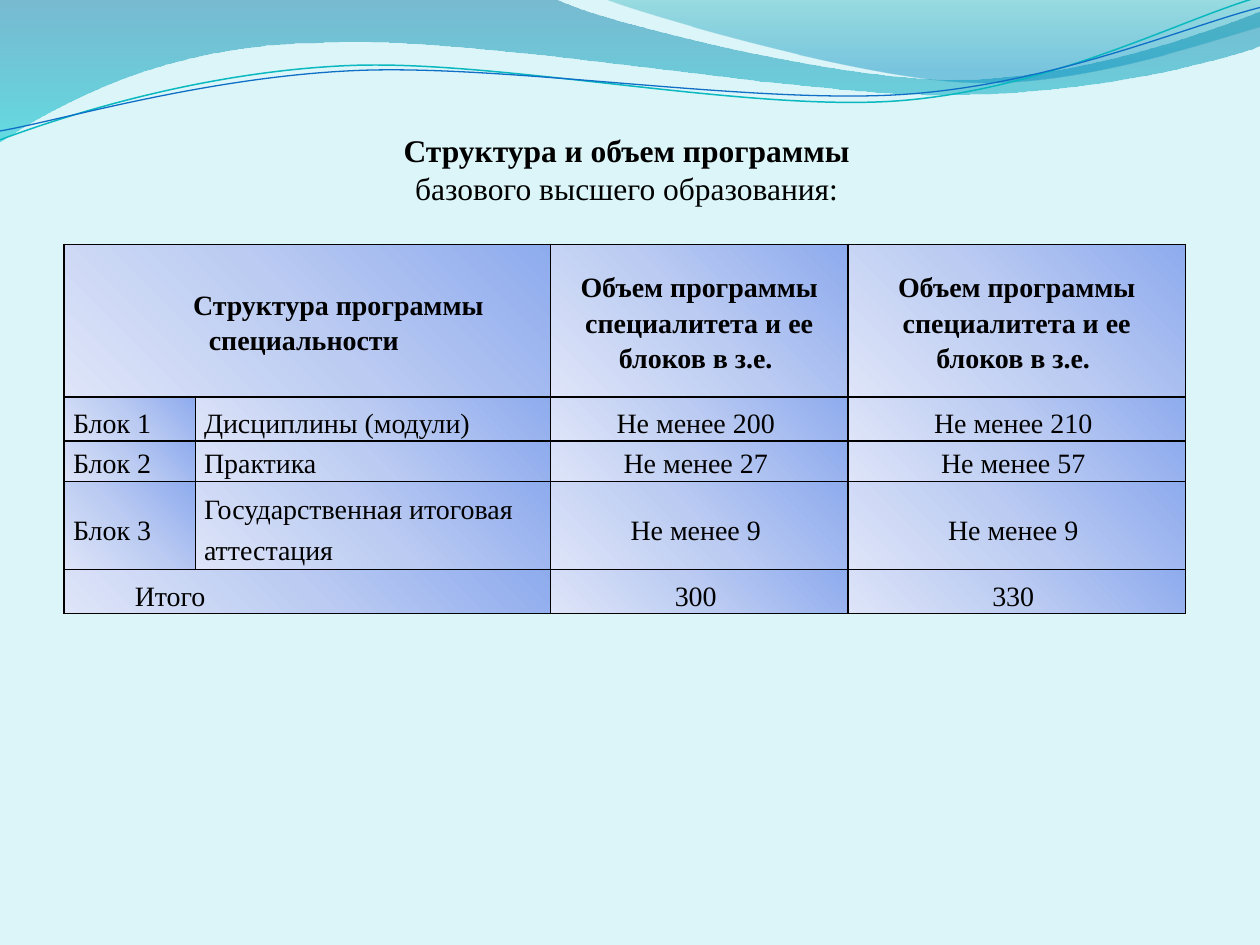
import math
from dataclasses import dataclass

from lxml import etree
from pptx import Presentation
from pptx import util as u
from pptx.dml.color import RGBColor
from pptx.enum import text
from pptx.oxml import ns


@dataclass(frozen=True)
class Theme:
    font: str = "Times New Roman"
    ink: str = "000000"
    back: str = "DBF5F9"
    teal: str = "0AB8BF"
    blue: str = "0F6FC6"
    head: int = 18
    cell: int = 16
    edge: float = 1
    wave: tuple = ((0, "0074A1", 45), (100, "00C6CF", 55))
    crest: tuple = ((0, "00A1A9", 30), (80, "008BBF", 45))
    tint: tuple = ((0, "8EABEE", 100), (50, "BBCBF2", 100), (100, "DEE5F8", 100))


def turn(point, pivot, angle):
    cos, sin = math.cos(math.radians(angle)), math.sin(math.radians(angle))
    x, y = point[0] - pivot[0], point[1] - pivot[1]
    return pivot[0] + x * cos - y * sin, pivot[1] + x * sin + y * cos


def bend(shape, steps):
    nodes = shape._element.findall(".//" + ns.qn("a:lnTo"))
    for step in steps:
        group, nodes = nodes[:len(step) // 2], nodes[len(step) // 2:]
        if len(group) == 1:
            continue
        arc = etree.Element(ns.qn("a:cubicBezTo"))
        group[0].addprevious(arc)
        for node in group:
            arc.append(node[0])
            node.getparent().remove(node)


def shade(node, stops, angle):
    grad = etree.SubElement(node, ns.qn("a:gradFill"), rotWithShape="1")
    steps = etree.SubElement(grad, ns.qn("a:gsLst"))
    for place, color, alpha in stops:
        stop = etree.SubElement(steps, ns.qn("a:gs"), pos=str(place * 1000))
        tone = etree.SubElement(stop, ns.qn("a:srgbClr"), val=color)
        if alpha < 100:
            etree.SubElement(tone, ns.qn("a:alpha"), val=str(alpha * 1000))
    etree.SubElement(grad, ns.qn("a:lin"), ang=str(angle * 60000), scaled="0")
    return grad


class Deck:
    COLS = 10

    def __init__(self, theme):
        self.theme = theme
        self.show = Presentation()
        self.show.slide_width = u.Inches(10)
        self.show.slide_height = u.Inches(7.5)
        self.unit = self.show.slide_width // self.COLS
        self.slide = self.show.slides.add_slide(self.show.slide_layouts[5])
        fill = self.slide.background.fill
        fill.solid()
        fill.fore_color.rgb = RGBColor.from_string(theme.back)

    def grid(self, *cells):
        return [round(cell * self.unit) for cell in cells]

    def run(self, para, words, size, bold=False):
        run = para.add_run()
        run.text = words
        run.font.name = self.theme.font
        run.font.color.rgb = RGBColor.from_string(self.theme.ink)
        run.font.size = u.Pt(size)
        run.font.bold = bold

    def outline(self, shapes, path, close, pivot=(0, 0), angle=0):
        points = [pair for step in path for pair in zip(step[::2], step[1::2])]
        spots = [tuple(self.grid(*turn(point, pivot, angle))) for point in points]
        pen = shapes.build_freeform(*spots[0], scale=1.0)
        pen.add_line_segments(spots[1:], close=close)
        shape = pen.convert_to_shape()
        bend(shape, path[1:])
        shape.rotation = -angle
        shape.shadow.inherit = False
        return shape

    def band(self, stops, *path):
        shape = self.outline(self.slide.shapes, path, True)
        shape.line.fill.background()
        props = shape.fill._xPr
        grad = shade(props, stops, 90)
        props.find(ns.qn("a:custGeom")).addnext(grad)

    def lines(self, angle, *items):
        shapes = self.slide.shapes.add_group_shape().shapes
        for color, width, pivot, path in items:
            shape = self.outline(shapes, path, False, pivot, angle)
            shape.fill.background()
            shape.line.color.rgb = RGBColor.from_string(color)
            shape.line.width = u.Pt(width)

    def title(self, place, lines):
        box = self.slide.shapes.title
        box.left, box.top, box.width, box.height = self.grid(*place)
        frame = box.text_frame
        frame.word_wrap = True
        frame.auto_size = text.MSO_AUTO_SIZE.NONE
        frame.vertical_anchor = text.MSO_ANCHOR.TOP
        para = frame.paragraphs[0]
        para.alignment = text.PP_ALIGN.CENTER
        para.line_spacing = 1.0
        for i, (words, bold) in enumerate(lines):
            if i:
                para.add_line_break()
            self.run(para, words, self.theme.head, bold)

    def table(self, place, cols, rows, data, gaps):
        size = (*place, sum(cols), sum(rows))
        table = self.slide.shapes.add_table(len(rows), len(cols), *self.grid(*size)).table
        table.first_row = table.horz_banding = False
        for col, width in zip(table.columns, self.grid(*cols)):
            col.width = width
        for row, height in zip(table.rows, self.grid(*rows)):
            row.height = height
        for r, line in enumerate(data):
            for c, words in enumerate(line):
                self.cell(table.cell(r, c), words, gaps[r], r == 0, r == 0 or c > 1)
            if line[1] is None:
                table.cell(r, 0).merge(table.cell(r, 1))
                para = table.cell(r, 0).text_frame.paragraphs[0]
                para._p.get_or_add_pPr().set("indent", str(self.grid(0.49)[0]))

    def cell(self, cell, words, gap, bold, center):
        cell.vertical_anchor = text.MSO_ANCHOR.MIDDLE
        cell.margin_left = cell.margin_right = u.Inches(0.07)
        cell.margin_top = u.Inches(0.01)
        cell.margin_bottom = 0
        props = cell._tc.get_or_add_tcPr()
        for side in ("lnL", "lnR", "lnT", "lnB"):
            edge = etree.SubElement(props, ns.qn("a:" + side), w=str(u.Pt(self.theme.edge)))
            fill = etree.SubElement(edge, ns.qn("a:solidFill"))
            etree.SubElement(fill, ns.qn("a:srgbClr"), val=self.theme.ink)
        shade(props, self.theme.tint, 135)
        if words is None:
            return
        para = cell.text_frame.paragraphs[0]
        para.alignment = text.PP_ALIGN.CENTER if center else text.PP_ALIGN.LEFT
        para.line_spacing = gap
        self.run(para, words, self.theme.cell, bold)

    def save(self):
        self.show.save("out.pptx")


def main():
    theme = Theme()
    deck = Deck(theme)
    deck.band(theme.wave, (0, -0.01), (4.4, -0.01),
              (4.76, 0.17, 6.64, 0.63, 7.58, 0.63), (8.53, 0.63, 9.58, 0.26, 10, 0.09),
              (10.01, 0.36), (9.83, 0.44, 8.7, 0.76, 7.46, 0.75),
              (6.22, 0.75, 3.82, 0.28, 2.57, 0.34), (1.29, 0.35, 0.46, 0.83, -0.01, 1.13))
    deck.band(theme.crest, (4.79, -0.01), (5.09, 0.11, 6.82, 0.62, 7.69, 0.65),
              (8.56, 0.69, 9.61, 0.32, 10, 0.21), (10, 0))
    upper = ((0, 1.11), (0.48, 0.93, 1.58, 0.57, 2.77, 0.52),
             (3.95, 0.47, 5.93, 0.89, 7.13, 0.8), (8.33, 0.71, 9.38, 0.15, 9.98, -0.02))
    lower = ((0, 1.04), (0.47, 0.96, 1.64, 0.61, 2.83, 0.56),
             (4.03, 0.51, 5.97, 0.83, 7.17, 0.75), (8.36, 0.67, 9.41, 0.21, 10, 0.06))
    deck.lines(2.7, (theme.teal, 0.85, (4.99, 0.58), upper),
               (theme.blue, 0.75, (5, 0.59), lower))
    deck.title((0.2, 0.99, 9.61, 0.84), [
        ("Структура и объем программы ", True),
        ("базового высшего образования: ", False),
    ])
    volume = "Объем программы специалитета и ее блоков в з.е. "
    deck.table((0.51, 1.94), (1.04, 2.82, 2.36, 2.68), (1.21, 0.35, 0.32, 0.7, 0.35), [
        ("Структура программы специальности ", None, volume, volume),
        ("Блок 1", "Дисциплины (модули)", "Не менее 200 ", "Не менее 210 "),
        ("Блок 2", "Практика", "Не менее 27 ", "Не менее 57 "),
        ("Блок 3", "Государственная итоговая аттестация", "Не менее 9 ", "Не менее 9 "),
        ("Итого", None, "300 ", "330 "),
    ], (1.15, 1.3, 1.15, 1.3, 1.3))
    deck.save()


if __name__ == "__main__":
    main()
